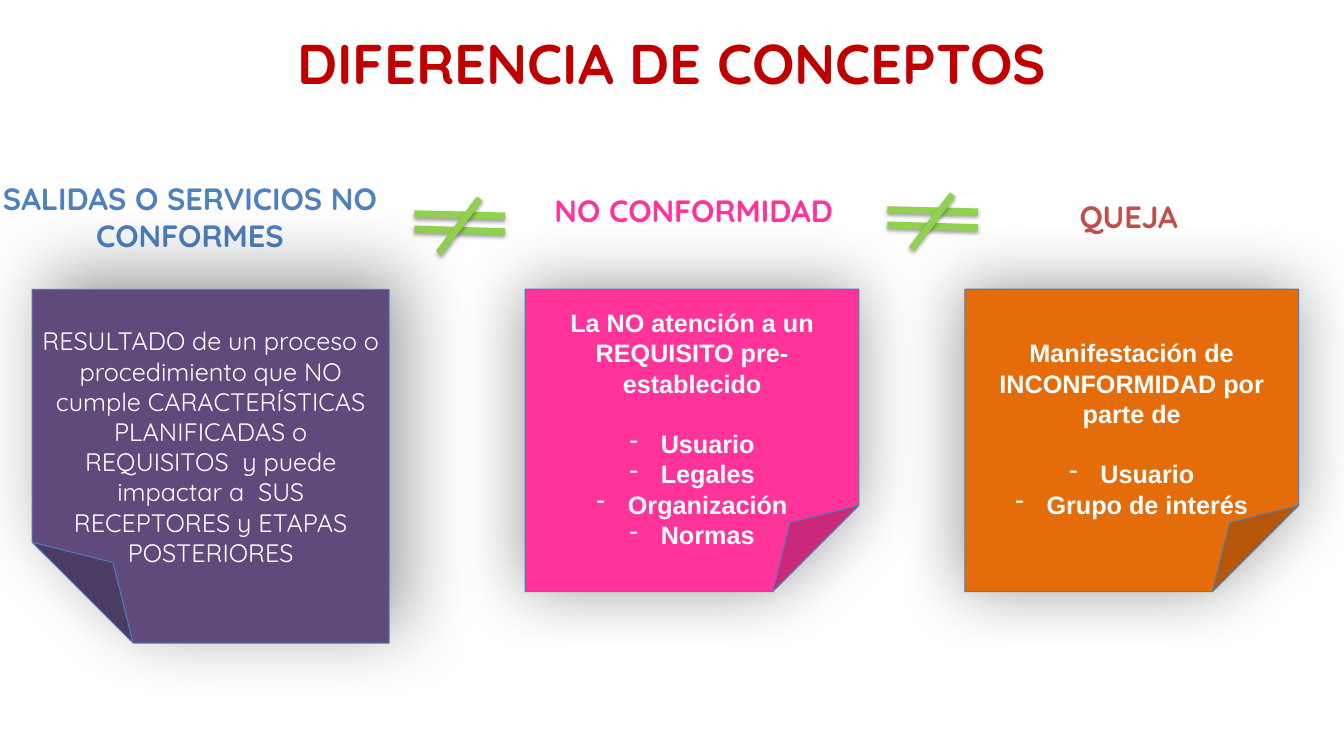
from collections import namedtuple
from dataclasses import dataclass

from lxml import etree
from pptx import Presentation
from pptx.dml.color import RGBColor
from pptx.enum.shapes import MSO_CONNECTOR, MSO_SHAPE
from pptx.enum.text import MSO_ANCHOR, MSO_AUTO_SIZE, PP_ALIGN
from pptx.oxml.ns import qn
from pptx.util import Inches, Pt

CENTER = PP_ALIGN.CENTER
TOP = MSO_ANCHOR.TOP
NO_AUTOFIT = MSO_AUTO_SIZE.NONE
FOLDED_CORNER = MSO_SHAPE.FOLDED_CORNER
STRAIGHT = MSO_CONNECTOR.STRAIGHT

SLIDE_W, SLIDE_H = Inches(13.33), Inches(7.5)
Box = namedtuple("Box", "left top width height")
Shadow = namedtuple("Shadow", "opacity blur distance angle")
Note = namedtuple("Note", "box fill font bold inset shadow flipped statement items")


@dataclass(frozen=True)
class Theme:
    title: str = "C00000"
    blue: str = "4F81BD"
    pink: str = "FF3399"
    red: str = "C0504D"
    purple: str = "604A7B"
    orange: str = "E46C0A"
    green: str = "92D050"
    outline: str = "4B7EBC"
    white: str = "FFFFFF"
    display: str = "Quicksand"
    body: str = "Arial"
    title_size: int = 40
    heading_size: int = 22
    body_size: int = 18


THEME = Theme()
RIGHT_SHADOW = Shadow(40, 55, 15, 315)
LEFT_SHADOW = Shadow(40, 49, 3, 225)
STROKE_SHADOW = Shadow(38, 3.1, 1.6, 90)


def percent_box(left, top, width, height):
    """Box given in percent of the slide's width and height."""
    return Box(int(SLIDE_W * left / 100), int(SLIDE_H * top / 100),
               int(SLIDE_W * width / 100), int(SLIDE_H * height / 100))


HEADINGS = [
    (percent_box(-0.68, 23.07, 29.63, 11.2), "SALIDAS O SERVICIOS NO CONFORMES", THEME.blue),
    (percent_box(35.03, 24.67, 33.16, 6.27), "NO CONFORMIDAD", THEME.pink),
    (percent_box(76.14, 25.47, 15.68, 6.27), "QUEJA", THEME.red),
]
SIGNS = [percent_box(30.83, 26.27, 6.75, 7.2), percent_box(66.02, 25.73, 6.75, 7.2)]
# Strokes of the sign as shares of its box: x1, y1, x2, y2
SIGN_STROKES = [(0, 0.28, 1, 0.32), (0, 0.56, 1, 0.61), (0.27, 1, 0.72, 0)]
NOTES = [
    Note(percent_box(2.4, 38.27, 26.56, 46.8), THEME.purple, THEME.display, False,
         0.36, RIGHT_SHADOW, True,
         "RESULTADO de un proceso o procedimiento que NO cumple CARACTERÍSTICAS "
         "PLANIFICADAS o REQUISITOS  y puede impactar a  SUS RECEPTORES y ETAPAS "
         "POSTERIORES", []),
    Note(percent_box(39.08, 38.27, 24.83, 40), THEME.pink, THEME.body, True,
         0.18, LEFT_SHADOW, False,
         "La NO atención a un REQUISITO pre-establecido",
         ["Usuario", "Legales", "Organización", "Normas"]),
    Note(percent_box(71.79, 38.27, 24.83, 40), THEME.orange, THEME.body, True,
         0.48, LEFT_SHADOW, False,
         "Manifestación de INCONFORMIDAD por parte de",
         ["Usuario", "Grupo de interés"]),
]


def add_shadow(shape, shadow):
    effects = etree.SubElement(shape._element.spPr, qn("a:effectLst"))
    outer = etree.SubElement(effects, qn("a:outerShdw"), blurRad=str(Pt(shadow.blur)),
                             dist=str(Pt(shadow.distance)), dir=str(shadow.angle * 60000),
                             algn="ctr", rotWithShape="0")
    color = etree.SubElement(outer, qn("a:srgbClr"), val="000000")
    etree.SubElement(color, qn("a:alpha"), val=str(shadow.opacity * 1000))


def set_fold(shape, share):
    guides = shape._element.spPr.find(qn("a:prstGeom")).get_or_add_avLst()
    etree.SubElement(guides, qn("a:gd"), name="adj", fmla=f"val {round(share * 100000)}")


def add_dash(paragraph):
    properties = paragraph._p.get_or_add_pPr()
    properties.set("marL", str(Inches(0.31)))
    properties.set("indent", str(-Inches(0.31)))
    etree.SubElement(properties, qn("a:buFontTx"))
    etree.SubElement(properties, qn("a:buChar"), char="-")


def write(paragraph, text, font, size, color, bold=True):
    paragraph.alignment = CENTER
    run = paragraph.add_run()
    run.text = text
    run.font.name = font
    run.font.size = Pt(size)
    run.font.bold = bold
    run.font.color.rgb = RGBColor.from_string(color)


def set_title(slide, box, text):
    title = slide.shapes.title
    title.left, title.top, title.width, title.height = box
    frame = title.text_frame
    frame.auto_size = NO_AUTOFIT
    frame.vertical_anchor = TOP
    write(frame.paragraphs[0], text, THEME.display, THEME.title_size, THEME.title)


def add_heading(slide, box, text, color):
    frame = slide.shapes.add_textbox(*box).text_frame
    frame.word_wrap = True
    write(frame.paragraphs[0], text, THEME.display, THEME.heading_size, color)


def add_not_equal(slide, box):
    for x1, y1, x2, y2 in SIGN_STROKES:
        stroke = slide.shapes.add_connector(
            STRAIGHT,
            int(box.left + x1 * box.width), int(box.top + y1 * box.height),
            int(box.left + x2 * box.width), int(box.top + y2 * box.height))
        stroke.line.color.rgb = RGBColor.from_string(THEME.green)
        stroke.line.width = Pt(5)
        add_shadow(stroke, STROKE_SHADOW)


def add_note(slide, note):
    sheet = slide.shapes.add_shape(FOLDED_CORNER, *note.box)
    set_fold(sheet, 0.285)
    sheet.fill.solid()
    sheet.fill.fore_color.rgb = RGBColor.from_string(note.fill)
    sheet.line.color.rgb = RGBColor.from_string(THEME.outline)
    sheet.line.width = Pt(0.75)
    add_shadow(sheet, note.shadow)
    if note.flipped:
        sheet._element.spPr.find(qn("a:xfrm")).set("flipH", "1")

    # Statement, then its dashed list
    frame = sheet.text_frame
    frame.word_wrap = True
    frame.vertical_anchor = TOP
    frame.margin_top = Inches(note.inset)
    style = (note.font, THEME.body_size, THEME.white, note.bold)
    write(frame.paragraphs[0], note.statement, *style)
    for index, item in enumerate(note.items):
        paragraph = frame.add_paragraph()
        if index == 0:
            paragraph.space_before = Pt(21.6)
        add_dash(paragraph)
        write(paragraph, item, *style)


def main():
    deck = Presentation()
    deck.slide_width, deck.slide_height = SLIDE_W, SLIDE_H
    slide = deck.slides.add_slide(deck.slide_layouts.get_by_name("Title Only"))
    set_title(slide, percent_box(12.6, 3.07, 74.79, 10.27), "DIFERENCIA DE CONCEPTOS")
    for heading in HEADINGS:
        add_heading(slide, *heading)
    for sign in SIGNS:
        add_not_equal(slide, sign)
    for note in NOTES:
        add_note(slide, note)
    deck.save("out.pptx")


if __name__ == "__main__":
    main()
